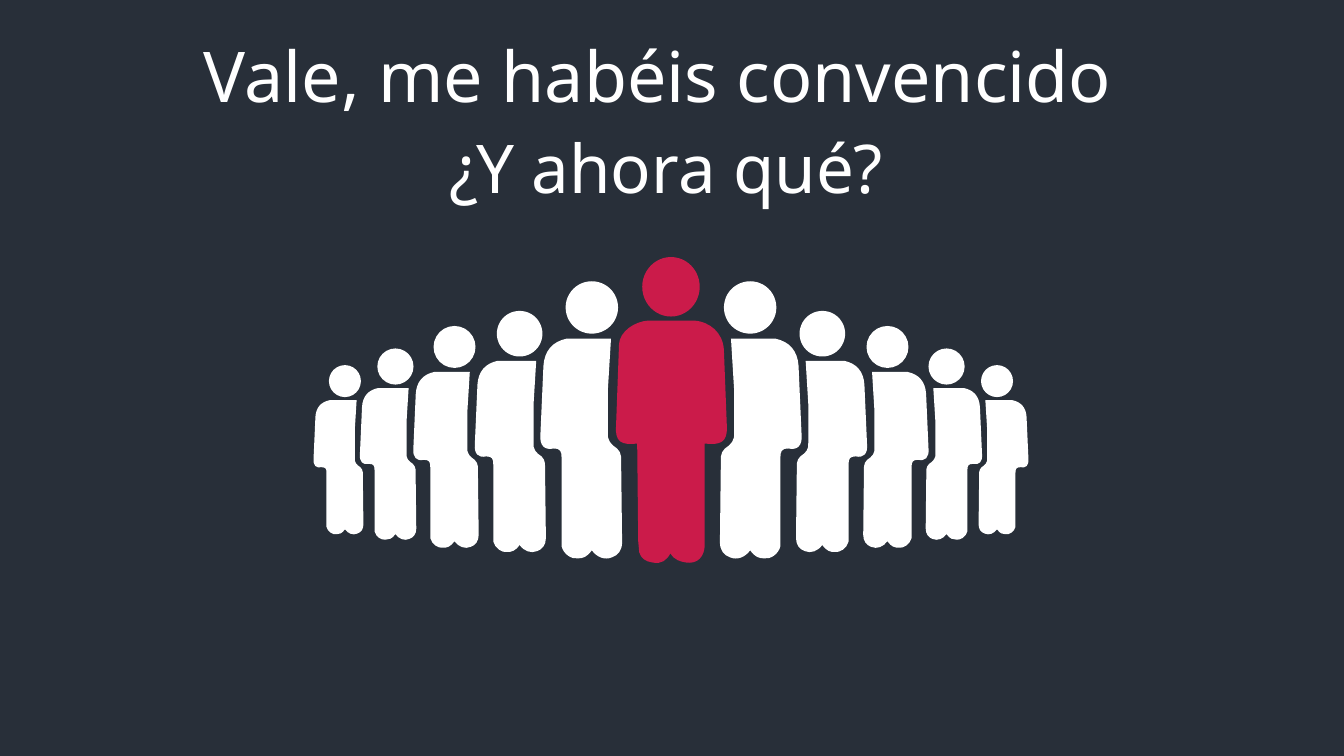
from dataclasses import dataclass

from pptx import Presentation
from pptx.dml.color import RGBColor
from pptx.enum.shapes import MSO_SHAPE
from pptx.enum.text import MSO_AUTO_SIZE, PP_ALIGN
from pptx.oxml.ns import qn
from pptx.util import Inches, Pt

COLS, ROWS = 1333, 750
AXIS = 665.5
FONT = "Noto Sans"
NIGHT, WHITE, RED = "282F39", "FFFFFF", "CB1B4A"

Curve = tuple[float, ...]


@dataclass(frozen=True)
class Head:
    left: float
    top: float
    width: float
    height: float


@dataclass(frozen=True)
class Body:
    start: tuple[float, float]
    curves: list[Curve]


@dataclass(frozen=True)
class Person:
    left: float
    top: float
    scale: float
    head: Head
    body: Body
    color: str


@dataclass(frozen=True)
class Title:
    text: str
    left: float
    top: float
    width: float
    height: float
    size: int


SIDE = Body((70, 0), [
    (67, 49), (67, 93),
    (66, 101, 70, 105, 76, 109), (78, 111, 80, 114, 80, 117),
    (81, 202), (81, 210, 77, 215, 71, 217),
    (64, 220, 56, 217, 51, 210), (46, 217, 42, 218, 37, 218),
    (31, 219, 23, 214, 21, 206), (21, 118),
    (21, 112, 20, 109, 13, 109), (4, 111, -1, 106, 0, 95),
    (3, 27), (4, 12, 12, 3, 26, 0),
])
FRONT = Body((21, 123), [
    (5, 125, -1, 121, 0, 106), (3, 24),
    (4, 12, 18, 2, 32, 1), (77, 1),
    (93, 2, 106, 13, 107, 30), (110, 108),
    (110, 121, 104, 125, 88, 123), (88, 223),
    (88, 235, 81, 243, 69, 241), (64, 240, 58, 239, 54, 232),
    (50, 239, 45, 243, 36, 241), (29, 240, 25, 237, 23, 231),
    (22, 220),
])
LEADER = Person(611, 317, 1, Head(26, -62, 57, 59), FRONT, RED)
TEAM = [
    Person(left, top, scale, Head(25, -57, 52, 52), SIDE, WHITE)
    for left, top, scale in [
        (536, 336, 1), (471, 358, 0.87), (410, 369, 0.8),
        (357, 385, 0.69), (311, 397, 0.61),
    ]
]
TITLES = [
    Title("¿Y ahora qué?", 435, 125, 452, 91, 48),
    Title("Vale, me habéis convencido", 153, 32, 999, 94, 50),
]

deck = Presentation()
deck.slide_width, deck.slide_height = Inches(13.33), Inches(7.5)


def col(count: float) -> int:
    return round(deck.slide_width * count / COLS)


def row(count: float) -> int:
    return round(deck.slide_height * count / ROWS)


def paint(fill, color: str) -> None:
    fill.solid()
    fill.fore_color.rgb = RGBColor.from_string(color)


def finish(shape, color: str) -> None:
    paint(shape.fill, color)
    shape.line.fill.background()
    shape.shadow.inherit = False


def bend(shape, curves: list[Curve]) -> None:
    track = shape.element.find(".//" + qn("a:path"))
    lines = iter(track.findall(qn("a:lnTo")))
    for curve in curves:
        first = next(lines)
        if len(curve) == 2:
            continue
        first.tag = qn("a:cubicBezTo")
        for _ in range(2):
            extra = next(lines)
            first.append(extra[0])
            track.remove(extra)


def draw_person(shapes, person: Person, mirror: bool = False) -> None:
    def place(x: float) -> float:
        spot = person.left + x * person.scale
        return 2 * AXIS - spot if mirror else spot

    def drop(y: float) -> float:
        return person.top + y * person.scale

    body, head = person.body, person.head
    pairs = [body.start]
    for curve in body.curves:
        pairs.extend(zip(curve[::2], curve[1::2]))
    points = [(col(place(x)), row(drop(y))) for x, y in pairs]
    outline = shapes.build_freeform(*points[0], scale=1.0)
    outline.add_line_segments(points[1:], close=True)
    shape = outline.convert_to_shape()
    bend(shape, body.curves)
    finish(shape, person.color)

    left = min(place(head.left), place(head.left + head.width))
    oval = shapes.add_shape(
        MSO_SHAPE.OVAL, col(left), row(drop(head.top)),
        col(head.width * person.scale), row(head.height * person.scale),
    )
    finish(oval, person.color)


def draw_title(shapes, title: Title) -> None:
    box = shapes.add_textbox(
        col(title.left), row(title.top), col(title.width), row(title.height)
    )
    frame = box.text_frame
    frame.word_wrap = True
    frame.auto_size = MSO_AUTO_SIZE.SHAPE_TO_FIT_TEXT
    frame.margin_left = frame.margin_right = 0
    frame.margin_top = frame.margin_bottom = 0
    frame.text = title.text
    line = frame.paragraphs[0]
    line.alignment = PP_ALIGN.CENTER
    font = line.runs[0].font
    font.name, font.size = FONT, Pt(title.size)
    paint(font.fill, WHITE)


def main() -> None:
    slide = deck.slides.add_slide(deck.slide_layouts[6])
    paint(slide.background.fill, NIGHT)
    for title in TITLES:
        draw_title(slide.shapes, title)
    draw_person(slide.shapes, LEADER)
    for mirror in (False, True):
        group = slide.shapes.add_group_shape()
        for person in TEAM:
            draw_person(group.shapes, person, mirror)
    deck.save("out.pptx")


if __name__ == "__main__":
    main()
